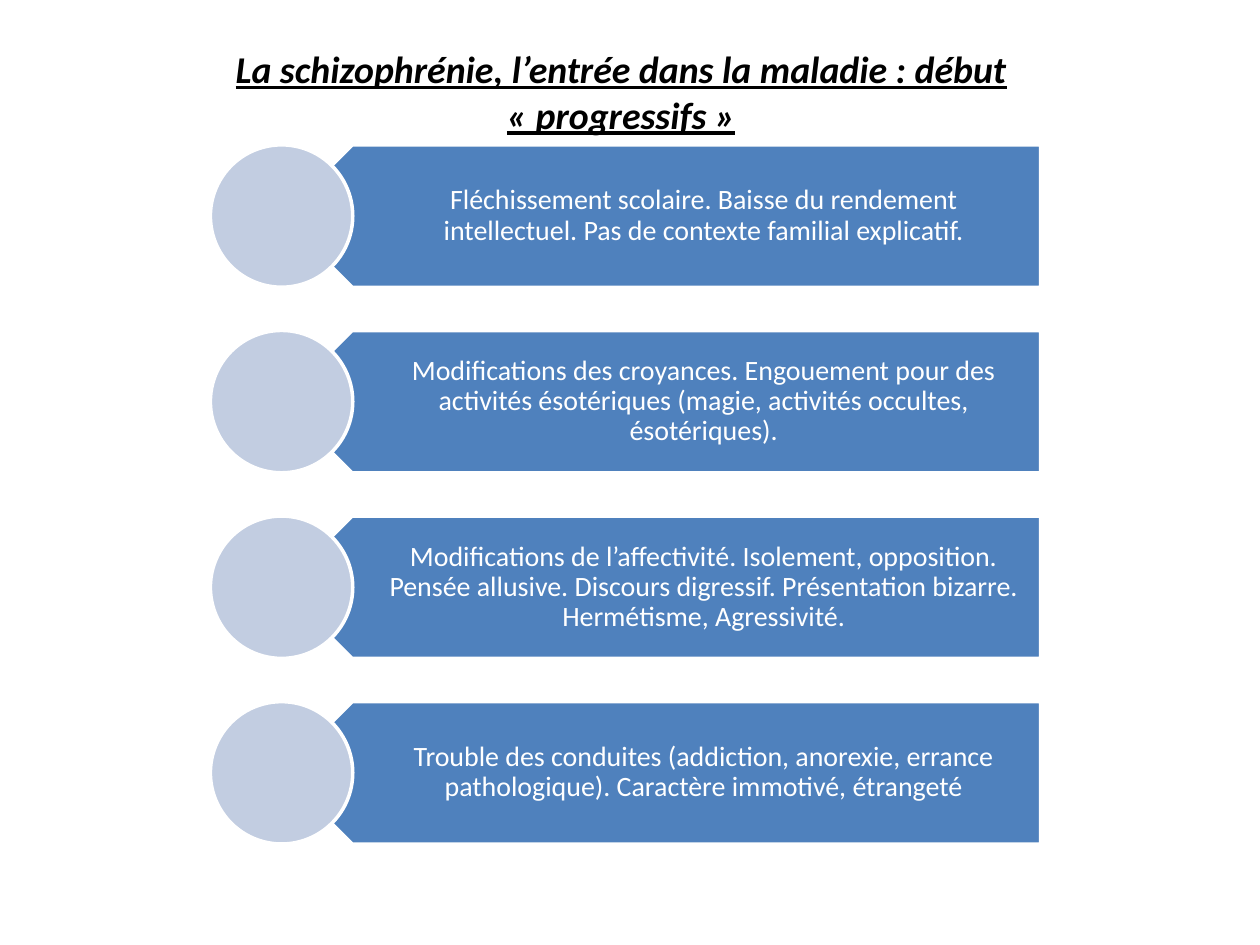
from dataclasses import dataclass

from pptx import Presentation
from pptx.dml.color import RGBColor
from pptx.enum.shapes import MSO_SHAPE
from pptx.enum.text import MSO_ANCHOR, PP_ALIGN
from pptx.util import Inches, Pt

BLACK = RGBColor(0x00, 0x00, 0x00)
WHITE = RGBColor(0xFF, 0xFF, 0xFF)
BANNER_BLUE = RGBColor(0x4F, 0x81, 0xBD)
DISC_BLUE = RGBColor(0xC2, 0xCD, 0xE1)
FONT = "Calibri"

SLIDE_W, SLIDE_H = Inches(10), Inches(7.5)

# Row grid, as shares of the slide's size
FIRST_TOP = 1.15 / 7.5
ROW_PITCH = 1.473 / 7.5
ROW_HEIGHT = 1.13 / 7.5


@dataclass(frozen=True)
class Area:
    """A rectangle given as shares of the slide's width and height."""
    left: float
    top: float
    width: float
    height: float

    def emu(self) -> tuple[int, int, int, int]:
        return (round(self.left * SLIDE_W), round(self.top * SLIDE_H),
                round(self.width * SLIDE_W), round(self.height * SLIDE_H))


@dataclass(frozen=True)
class Sign:
    row: int
    text: str

    def area(self, left: float, width: float) -> Area:
        return Area(left, FIRST_TOP + self.row * ROW_PITCH, width, ROW_HEIGHT)


SIGNS = [Sign(row, text) for row, text in enumerate((
    "Fléchissement scolaire. Baisse du rendement intellectuel. "
    "Pas de contexte familial explicatif.",
    "Modifications des croyances. Engouement pour des activités ésotériques "
    "(magie, activités occultes, ésotériques).",
    "Modifications de l’affectivité. Isolement, opposition. Pensée allusive. "
    "Discours digressif. Présentation bizarre. Hermétisme, Agressivité.",
    "Trouble des conduites (addiction, anorexie, errance pathologique). "
    "Caractère immotivé, étrangeté",
))]


def add_outlined(slide, kind: MSO_SHAPE, area: Area, fill: RGBColor):
    shape = slide.shapes.add_shape(kind, *area.emu())
    shape.shadow.inherit = False
    shape.fill.solid()
    shape.fill.fore_color.rgb = fill
    shape.line.color.rgb = WHITE
    shape.line.width = Pt(2)
    return shape


def add_text(slide, area: Area, text: str, size: float, color: RGBColor,
             insets: tuple[float, float, float, float] = (0.1, 0.05, 0.1, 0.05)):
    frame = slide.shapes.add_textbox(*area.emu()).text_frame
    frame.word_wrap = True
    frame.vertical_anchor = MSO_ANCHOR.MIDDLE
    (frame.margin_left, frame.margin_top,
     frame.margin_right, frame.margin_bottom) = map(Inches, insets)
    paragraph = frame.paragraphs[0]
    paragraph.text = text
    paragraph.alignment = PP_ALIGN.CENTER
    paragraph.font.name = FONT
    paragraph.font.size = Pt(size)
    paragraph.font.color.rgb = color
    return paragraph


def add_sign(slide, sign: Sign) -> None:
    banner = add_outlined(slide, MSO_SHAPE.PENTAGON, sign.area(0.223, 0.603), BANNER_BLUE)
    banner.rotation = 180
    label = add_text(slide, sign.area(0.252, 0.575), sign.text, 16, WHITE,
                     (0.5, 0.07, 0.12, 0.07))
    label.line_spacing = 0.9
    add_outlined(slide, MSO_SHAPE.OVAL, sign.area(0.167, 0.113), DISC_BLUE)


def main() -> None:
    deck = Presentation()
    deck.slide_width, deck.slide_height = SLIDE_W, SLIDE_H
    slide = deck.slides.add_slide(deck.slide_layouts[6])

    # Title, with a line break before the quoted word
    title = add_text(slide, Area(0.043, 0.29 / 7.5, 0.9, 0.87 / 7.5),
                     "La schizophrénie, l’entrée dans la maladie : début\v« progressifs »",
                     21.6, BLACK)
    title.font.bold = title.font.italic = title.font.underline = True

    # Early signs, one banner and disc per row
    for sign in SIGNS:
        add_sign(slide, sign)

    deck.save("out.pptx")


if __name__ == "__main__":
    main()
